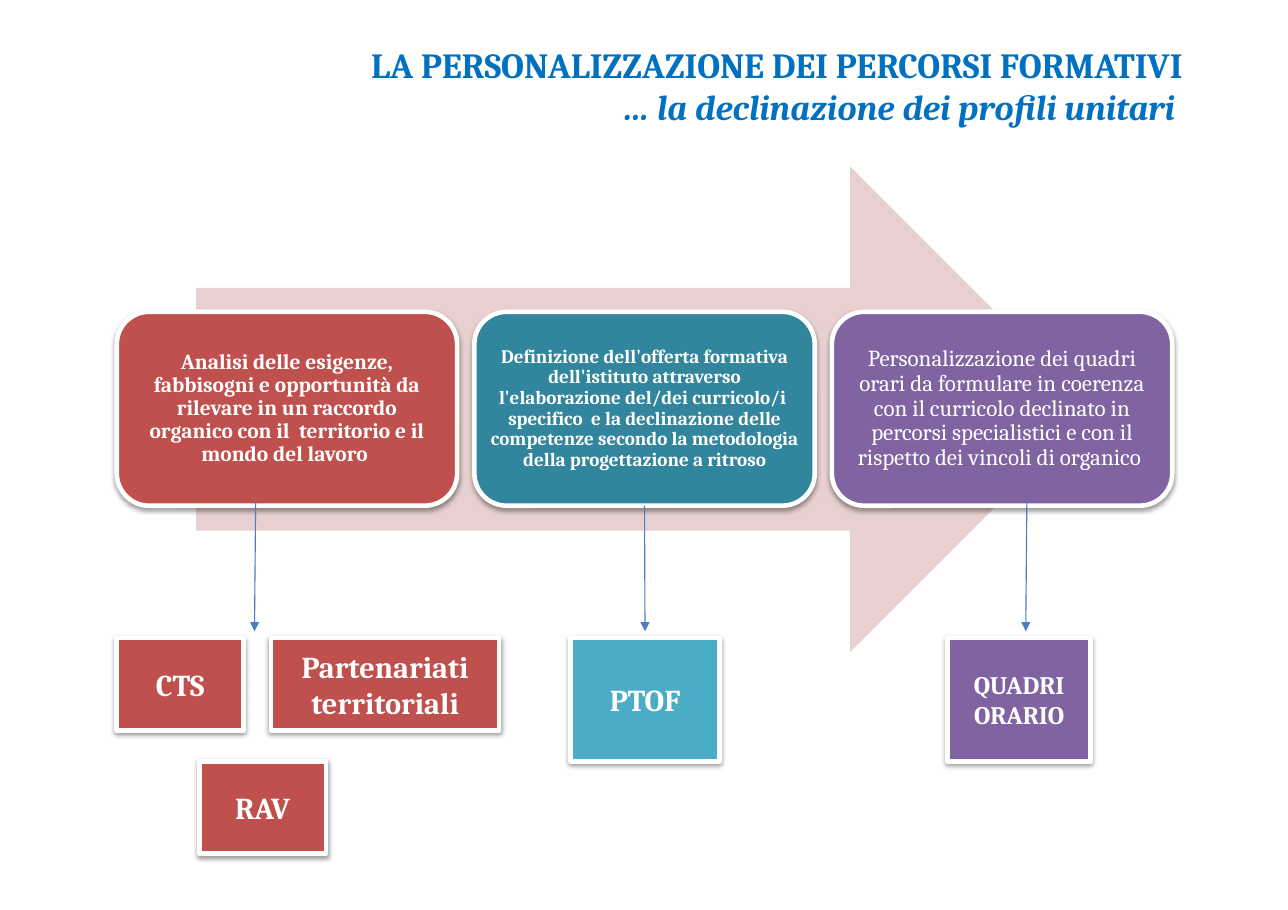
from pptx import Presentation, util as u
from pptx.dml.color import RGBColor
from pptx.enum import shapes, text
from pptx.oxml import parse_xml
from pptx.oxml.ns import nsdecls, qn

THEME = {
    "font": "Cambria",
    "title": "0070C0", "arrow": "E8D0D0", "white": "FFFFFF", "line": "4B7EBC",
    "red": "C0504D", "teal": "31859C", "aqua": "4BACC6", "purple": "8064A2",
    "title_pt": 23.1, "label_pt": 19.8, "small_pt": 16.5,
}
SHAPE, ALIGN = shapes.MSO_SHAPE, text.PP_ALIGN

prs = Presentation()
prs.slide_width, prs.slide_height = u.Inches(11.69), u.Inches(8.26)
s = prs.slides.add_slide(prs.slide_layouts[6])


def place(*shares):
    sides = (prs.slide_width, prs.slide_height) * 2
    return [round(side * share / 100) for side, share in zip(sides, shares)]


def add_box(kind, box, fill, words, pt, bold=True, inset=(0.1, 0.05), spacing=1):
    sp = s.shapes.add_shape(kind, *place(*box))
    sp.fill.solid()
    sp.fill.fore_color.rgb = RGBColor.from_string(THEME[fill])
    sp.line.color.rgb = RGBColor.from_string(THEME["white"])
    sp.line.width = u.Pt(3)
    sp.shadow.inherit = False
    sp._element.spPr.find(qn("a:effectLst")).append(parse_xml(
        f'<a:outerShdw {nsdecls("a")} blurRad="40000" dist="20000" dir="5400000" '
        'rotWithShape="0"><a:srgbClr val="000000"><a:alpha val="38000"/>'
        '</a:srgbClr></a:outerShdw>'))
    tf = sp.text_frame
    tf.word_wrap = True
    tf.vertical_anchor = text.MSO_ANCHOR.MIDDLE
    tf.margin_left = tf.margin_right = u.Inches(inset[0])
    tf.margin_top = tf.margin_bottom = u.Inches(inset[1])
    p = tf.paragraphs[0]
    p.alignment = ALIGN.CENTER
    p.line_spacing = spacing
    r = p.add_run()
    r.text = words
    r.font.name, r.font.size, r.font.bold = THEME["font"], u.Pt(pt), bold
    r.font.color.rgb = RGBColor.from_string(THEME["white"])
    return sp


tf = s.shapes.add_textbox(*place(7.36, 4.12, 85.37, 10.65)).text_frame
tf.word_wrap = True
title = [("LA PERSONALIZZAZIONE DEI PERCORSI FORMATIVI", False),
         ("… la declinazione dei profili unitari ", True)]
for i, (words, italic) in enumerate(title):
    p = tf.add_paragraph() if i else tf.paragraphs[0]
    p.alignment = ALIGN.RIGHT
    r = p.add_run()
    r.text = words
    r.font.name, r.font.size = THEME["font"], u.Pt(THEME["title_pt"])
    r.font.bold, r.font.italic = True, italic
    r.font.color.rgb = RGBColor.from_string(THEME["title"])

sp = s.shapes.add_shape(SHAPE.RIGHT_ARROW, *place(15.23, 18.28, 69.63, 53.39))
sp.fill.solid()
sp.fill.fore_color.rgb = RGBColor.from_string(THEME["arrow"])
sp.line.fill.background()
sp.shadow.inherit = False

card_left, card_pitch = 9.07, 27.76
phases = [
    ("red", 14, True, 0.06,
     "Analisi delle esigenze, fabbisogni e opportunità da rilevare in un raccordo "
     "organico con il  territorio e il mondo del lavoro "),
    ("teal", 12.5, True, 0.05,
     "Definizione dell'offerta formativa dell'istituto attraverso l'elaborazione "
     "del/dei curricolo/i  specifico  e la declinazione delle competenze secondo "
     "la metodologia della progettazione a ritroso"),
    ("purple", 15, False, 0.06,
     "Personalizzazione dei quadri orari da formulare in coerenza con il curricolo "
     "declinato in percorsi specialistici e con il rispetto dei vincoli di organico "),
]
cards = []
for i, (fill, pt, bold, inset, words) in enumerate(phases):
    box = (card_left + i * card_pitch, 34.26, 26.43, 21.31)
    cards.append(add_box(SHAPE.ROUNDED_RECTANGLE, box, fill, words, pt, bold,
                         (inset, inset), 0.9))

row_1, row_2, low, tall = 70.1, 83.66, 10.17, 13.56
outputs = [
    ("RAV", "red", "label_pt", (15.48, row_2, 9.84, low)),
    ("PTOF", "aqua", "label_pt", (44.31, row_1, 11.55, tall)),
    ("QUADRI ORARIO", "purple", "small_pt", (73.57, row_1, 11.12, tall)),
    ("CTS", "red", "label_pt", (card_left, row_1, 9.84, low)),
    ("Partenariati territoriali", "red", "label_pt", (21.04, row_1, 17.71, low)),
]
for words, fill, size, box in outputs:
    add_box(SHAPE.RECTANGLE, box, fill, words, THEME[size], inset=(0.11, 0.06))

links = [(19.85, 19.76, None), (50.08, 50.08, cards[1]), (79.73, 79.64, None)]
for start, end, card in links:
    cx = s.shapes.add_connector(shapes.MSO_CONNECTOR.STRAIGHT,
                                *place(start, 54.96, end, 69.37))
    if card:
        cx.begin_connect(card, 2)
    cx.line.color.rgb = RGBColor.from_string(THEME["line"])
    cx.line.width = u.Pt(0.75)
    cx.line._get_or_add_ln().append(
        parse_xml(f'<a:tailEnd {nsdecls("a")} type="triangle"/>'))
    cx._element.spPr.append(parse_xml(f'<a:effectLst {nsdecls("a")}/>'))

prs.save("out.pptx")
